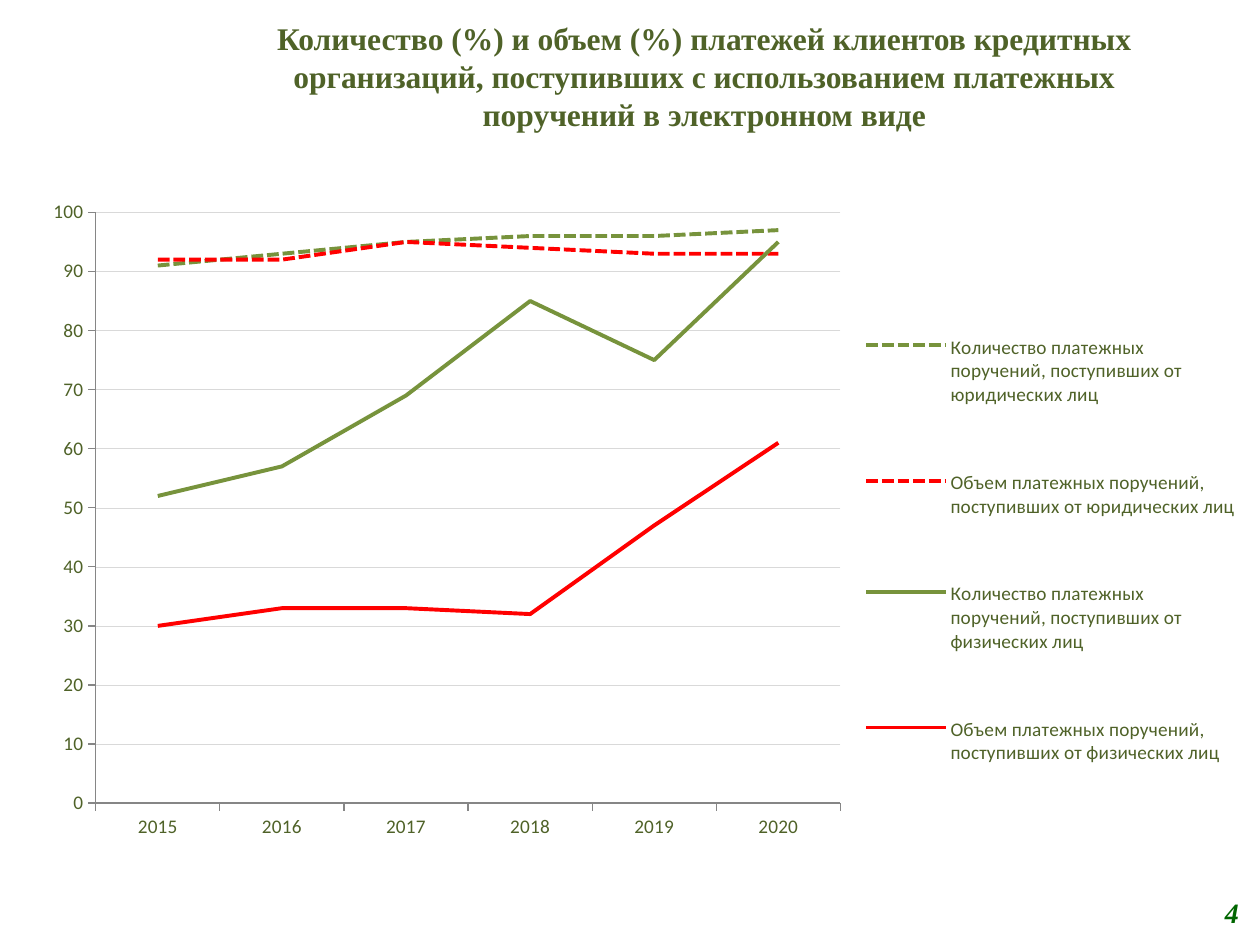
"""Build the slide on the share of client payments made with electronic payment orders."""
from pptx import Presentation
from pptx.chart.data import CategoryChartData
from pptx.dml.color import RGBColor
from pptx.enum.chart import XL_CHART_TYPE as ChartType, XL_LEGEND_POSITION as LegendPosition
from pptx.enum.chart import XL_TICK_MARK as TickMark
from pptx.enum.dml import MSO_LINE_DASH_STYLE as Dash
from pptx.enum.text import MSO_ANCHOR as Anchor, MSO_AUTO_SIZE as AutoSize, PP_ALIGN as Align
from pptx.oxml import parse_xml
from pptx.oxml.ns import nsdecls, qn
from pptx.util import Inches, Pt

COLORS = {"text": "4F6228", "count": "77933C", "volume": "FF0000",
          "grid": "D9D9D9", "axis": "868686", "page": "006600"}
TITLE = ("Количество (%) и объем (%) платежей клиентов кредитных организаций, "
         "поступивших с использованием платежных поручений в электронном виде")
PAGE = "4"
YEARS = ["2015", "2016", "2017", "2018", "2019", "2020"]
SERIES = [
    ("Количество платежных поручений, поступивших от юридических лиц",
     "count", Dash.SQUARE_DOT, (91, 93, 95, 96, 96, 97)),
    ("Объем платежных поручений, поступивших от юридических лиц",
     "volume", Dash.SQUARE_DOT, (92, 92, 95, 94, 93, 93)),
    ("Количество платежных поручений, поступивших от физических лиц",
     "count", Dash.SOLID, (52, 57, 69, 85, 75, 95)),
    ("Объем платежных поручений, поступивших от физических лиц",
     "volume", Dash.SOLID, (30, 33, 33, 32, 47, 61)),
]
TITLE_BOX = (1.85, 0.1, 7.48, 1.06)
PAGE_BOX = (9.41, 7.04, 0.52, 0.4)
CHART_BOX = (0.28, 1.53, 9.61, 5.21)
PLOT_SHARE = (0.05, 0.03, 0.615, 0.9)
LEGEND_SHARE = (0.69, 0.12, 0.31, 0.85)


def color(name):
    return RGBColor.from_string(COLORS[name])


def style_font(font, size, name, shade, bold=False, italic=False):
    font.size, font.name, font.bold, font.italic = Pt(size), name, bold, italic
    font.color.rgb = color(shade)


def style_line(line, shade, width):
    line.color.rgb = color(shade)
    line.width = Pt(width)


def fill_text(frame, text, align, anchor, **font):
    frame.word_wrap = True
    frame.auto_size = AutoSize.NONE
    frame.vertical_anchor = anchor
    frame.text = text
    paragraph = frame.paragraphs[0]
    paragraph.alignment = align
    style_font(paragraph.font, name="Times New Roman", bold=True, **font)


def set_layout(parent, index, share, inner=False):
    for old in parent.findall(qn("c:layout")):
        parent.remove(old)
    target = '<c:layoutTarget val="inner"/>' if inner else ""
    modes = '<c:xMode val="edge"/><c:yMode val="edge"/>'
    sizes = "".join(f'<c:{key} val="{value}"/>' for key, value in zip("xywh", share))
    parent.insert(index, parse_xml(
        f'<c:layout {nsdecls("c")}><c:manualLayout>{target}{modes}{sizes}'
        '</c:manualLayout></c:layout>'))


def add_payments_chart(slide):
    data = CategoryChartData(number_format="0")
    data.categories = YEARS
    for name, _, _, values in SERIES:
        data.add_series(name, values)
    chart = slide.shapes.add_chart(ChartType.LINE, *map(Inches, CHART_BOX), data).chart
    chart.has_title = False
    style_font(chart.font, 11, "Calibri", "text")

    for series, (_, shade, dash, _) in zip(chart.plots[0].series, SERIES):
        series.smooth = False
        style_line(series.format.line, shade, 2.25)
        series.format.line.dash_style = dash
    chart.plots[0].vary_by_categories = False

    for axis in (chart.category_axis, chart.value_axis):
        axis.major_tick_mark = TickMark.OUTSIDE
        axis.minor_tick_mark = TickMark.NONE
        style_line(axis.format.line, "axis", 0.75)
        style_font(axis.tick_labels.font, 11, "Calibri", "text")
    values = chart.value_axis
    values.minimum_scale, values.maximum_scale, values.major_unit = 0, 100, 10
    values.tick_labels.number_format = "0"
    values.tick_labels.number_format_is_linked = False
    style_line(values.major_gridlines.format.line, "grid", 0.25)

    chart.has_legend = True
    legend = chart.legend
    legend.position = LegendPosition.RIGHT
    legend.include_in_layout = False
    style_font(legend.font, 11, "Calibri", "text")
    plot_area = chart.plots[0]._element.getparent()
    set_layout(plot_area, 0, PLOT_SHARE, inner=True)
    set_layout(legend._element, 1, LEGEND_SHARE)


def main():
    deck = Presentation()
    deck.slide_width, deck.slide_height = Inches(10), Inches(7.5)
    slide = deck.slides.add_slide(deck.slide_layouts[5])
    title = slide.shapes.title
    title.left, title.top, title.width, title.height = map(Inches, TITLE_BOX)
    fill_text(title.text_frame, TITLE, Align.CENTER, Anchor.TOP, size=18, shade="text")
    page = slide.shapes.add_textbox(*map(Inches, PAGE_BOX))
    fill_text(page.text_frame, PAGE, Align.RIGHT, Anchor.MIDDLE,
              size=16, shade="page", italic=True)
    add_payments_chart(slide)
    deck.save("out.pptx")


if __name__ == "__main__":
    main()
